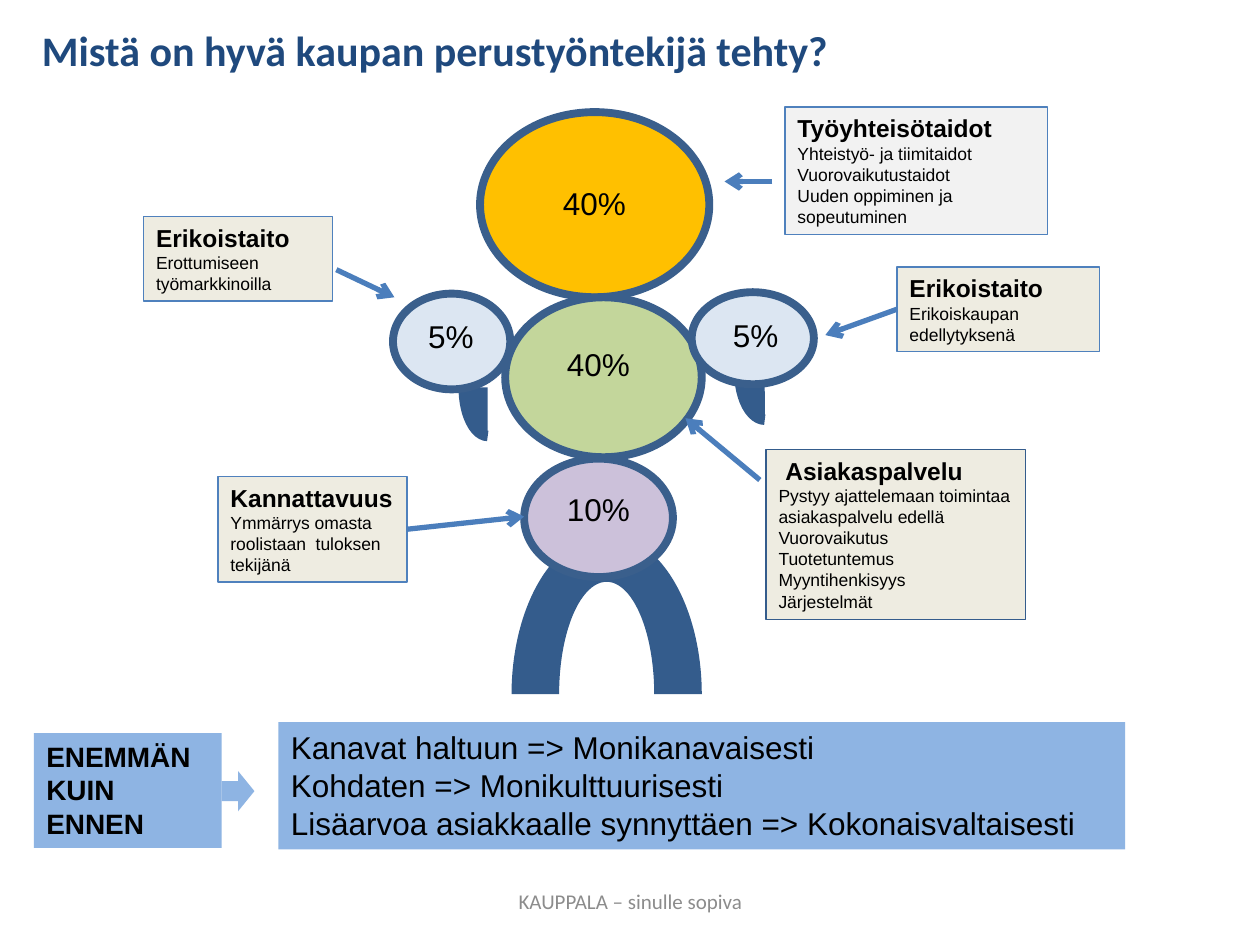
from dataclasses import dataclass

from lxml.etree import SubElement
from pptx import Presentation
from pptx.dml.color import RGBColor
from pptx.enum.shapes import MSO_CONNECTOR, MSO_SHAPE
from pptx.enum.text import MSO_ANCHOR, PP_ALIGN
from pptx.oxml.ns import qn
from pptx.util import Pt


@dataclass(frozen=True)
class Theme:
    title_font: str = "Calibri"
    body_font: str = "Arial"
    title: str = "1F497D"
    text: str = "000000"
    footer: str = "8C8C8C"
    limb: str = "345C8C"
    outline: str = "3A5F8C"
    head: str = "FFC000"
    body: str = "C3D69B"
    hips: str = "CCC1DA"
    hand: str = "DCE6F2"
    note: str = "EEECE1"
    team_note: str = "F2F2F2"
    note_line: str = "4F81BD"
    arrow: str = "4B7EBC"
    banner: str = "8EB4E3"
    title_size: float = 24
    value_size: float = 18
    banner_size: float = 16
    heading_size: float = 14
    footer_size: float = 12
    detail_size: float = 10


class SlideBuilder:
    def __init__(self, slide, theme):
        self.slide = slide
        self.theme = theme

    def shape(self, kind, bounds, fill, line=None, width=0.75):
        shape = self.slide.shapes.add_shape(kind, *map(Pt, bounds))
        shape.shadow.inherit = False
        shape.fill.solid()
        shape.fill.fore_color.rgb = RGBColor.from_string(fill)
        if line:
            shape.line.color.rgb = RGBColor.from_string(line)
            shape.line.width = Pt(width)
        else:
            shape.line.fill.background()
        return shape

    def add_lines(self, shape, lines, anchor=MSO_ANCHOR.TOP, align=PP_ALIGN.LEFT,
                  color=None, font=None):
        """Fill a shape with lines of (text, size, bold)."""
        frame = shape.text_frame
        frame.word_wrap = True
        frame.vertical_anchor = anchor
        for index, (text, size, bold) in enumerate(lines):
            paragraph = frame.paragraphs[0] if index == 0 else frame.add_paragraph()
            paragraph.alignment = align
            run = paragraph.add_run()
            run.text = text
            run.font.name = font or self.theme.body_font
            run.font.size = Pt(size)
            run.font.bold = bold
            run.font.color.rgb = RGBColor.from_string(color or self.theme.text)
        return shape

    def text(self, bounds, lines, **style):
        text_box = self.slide.shapes.add_textbox(*map(Pt, bounds))
        return self.add_lines(text_box, lines, **style)

    def centred_line(self, bounds, line, color):
        return self.text(bounds, [line], anchor=MSO_ANCHOR.MIDDLE, align=PP_ALIGN.CENTER,
                         color=color, font=self.theme.title_font)

    def oval(self, bounds, fill):
        return self.shape(MSO_SHAPE.OVAL, bounds, fill, self.theme.outline, 4.5)

    def arm(self, bounds):
        arm = self.shape(MSO_SHAPE.ARC, bounds, self.theme.limb, self.theme.limb, 6)
        arm.rotation = 180
        return arm

    def percentage(self, left, top, value):
        return self.text((left, top, 50.4, 28.8), [(value, self.theme.value_size, False)])

    def note(self, bounds, heading, details, fill=None, line=None):
        box = self.shape(MSO_SHAPE.RECTANGLE, bounds, fill or self.theme.note,
                         line or self.theme.note_line)
        lines = [(heading, self.theme.heading_size, True)]
        lines += [(detail, self.theme.detail_size, False) for detail in details]
        return self.add_lines(box, lines)

    def banner(self, bounds, texts, size, bold):
        box = self.shape(MSO_SHAPE.RECTANGLE, bounds, self.theme.banner)
        return self.add_lines(box, [(text, size, bold) for text in texts])

    def arrow(self, start, end, source=None, side=None):
        """Draw an arrow, joined at its start to a side of source if given."""
        connector = self.slide.shapes.add_connector(
            MSO_CONNECTOR.STRAIGHT, *map(Pt, start + end))
        connector.line.color.rgb = RGBColor.from_string(self.theme.arrow)
        connector.line.width = Pt(3)
        SubElement(connector.line._get_or_add_ln(), qn("a:tailEnd")).set("type", "arrow")
        SubElement(connector._element.spPr, qn("a:effectLst"))
        if source is not None:
            connector.begin_connect(source, side)
        return connector


def main():
    presentation = Presentation()
    presentation.slide_width, presentation.slide_height = Pt(720), Pt(540)
    theme = Theme()
    builder = SlideBuilder(
        presentation.slides.add_slide(presentation.slide_layouts[6]), theme)

    builder.centred_line((-20.9, -7.2, 544.3, 71.3),
                         ("Mistä on hyvä kaupan perustyöntekijä tehty? ", theme.title_size, True),
                         theme.title)
    builder.centred_line((246.2, 500.4, 228.2, 28.8),
                         ("KAUPPALA – sinulle sopiva", theme.footer_size, False), theme.footer)

    # The figure, from the back to the front
    builder.shape(MSO_SHAPE.BLOCK_ARC, (292.3, 305.3, 108.7, 182.9), theme.limb)
    for bounds in ((422.6, 186.5, 28.8, 53.3), (265, 193.7, 27.4, 55.4)):
        builder.arm(bounds)
    body_parts = [
        ((299.5, 262.1, 85, 67.7), theme.hips, (316.8, 276.5), "10%"),
        ((274.3, 64.1, 131, 105.8), theme.head, (314.6, 101.5), "40%"),
        ((288.7, 169.9, 112.3, 91.4), theme.body, (316.8, 193.7), "40%"),
        ((395.3, 167, 69.8, 52.6), theme.hand, (411.8, 177.1), "5%"),
        ((224.6, 167.8, 67, 54.7), theme.hand, (237.6, 177.8), "5%"),
    ]
    for bounds, fill, (left, top), value in body_parts:
        builder.oval(bounds, fill)
        builder.percentage(left, top, value)

    builder.note((448.6, 61.2, 149.8, 72.7), "Työyhteisötaidot",
                 ["Yhteistyö- ja tiimitaidot", "Vuorovaikutustaidot",
                  "Uuden oppiminen ja sopeutuminen"], fill=theme.team_note)
    retail_note = builder.note((512.6, 152.6, 115.9, 48.2), "Erikoistaito",
                               ["Erikoiskaupan edellytyksenä"])
    builder.note((82.1, 123.8, 108, 48.2), "Erikoistaito", ["Erottumiseen työmarkkinoilla"])
    profit_note = builder.note((124.6, 272.2, 108, 60.5), "Kannattavuus",
                               ["Ymmärrys omasta roolistaan  tuloksen tekijänä"])
    service_note = builder.note(
        (437.8, 257, 148.3, 97.2), "Asiakaspalvelu",
        ["Pystyy ajattelemaan toimintaa asiakaspalvelu edellä", "Vuorovaikutus",
         "Tuotetuntemus", "Myyntihenkisyys", "Järjestelmät"], line=theme.limb)
    heading = service_note.text_frame.paragraphs[0]
    heading._p.get_or_add_pPr().set("indent", str(Pt(3.9)))

    builder.arrow((441.4, 103.7), (414, 103.7))
    builder.arrow((434.2, 274.3), (391.7, 239))
    builder.arrow((512.6, 176.7), (471.6, 191.5), retail_note, 1)
    builder.arrow((232.6, 302.4), (299.5, 295.2), profit_note, 3)
    builder.arrow((192.2, 154.1), (225.4, 169.9))

    builder.banner((19.4, 419, 107.3, 65.5), ["ENEMMÄN KUIN ENNEN"], theme.banner_size, True)
    builder.shape(MSO_SHAPE.RIGHT_ARROW, (126.7, 440.6, 18.7, 23), theme.banner)
    builder.banner((159.1, 412.6, 483.8, 72.7),
                   ["Kanavat haltuun => Monikanavaisesti",
                    "Kohdaten => Monikulttuurisesti",
                    "Lisäarvoa asiakkaalle synnyttäen => Kokonaisvaltaisesti"],
                   theme.value_size, False)

    presentation.save("out.pptx")


if __name__ == "__main__":
    main()
